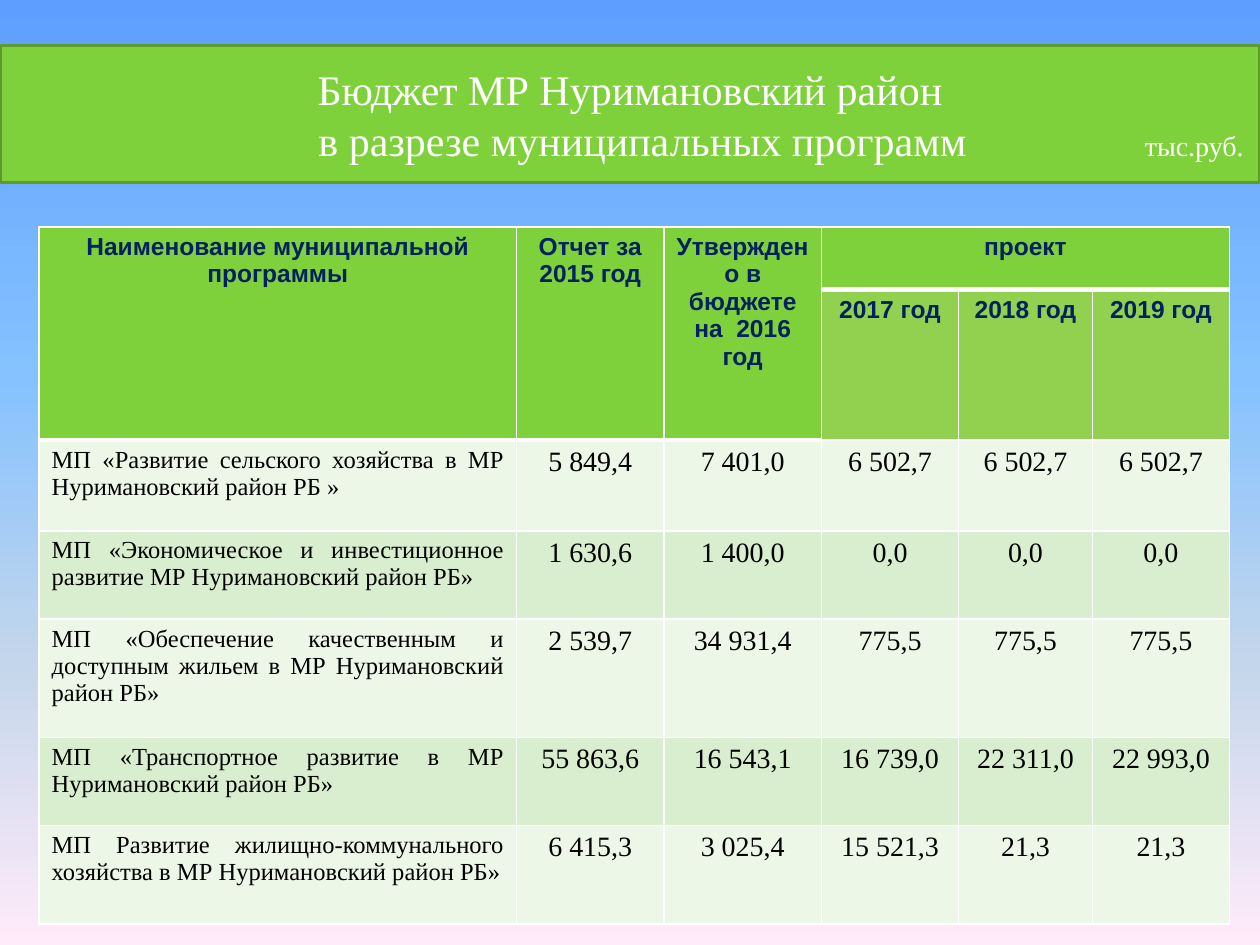
from dataclasses import dataclass

from lxml.etree import SubElement
from pptx import Presentation
from pptx.dml.color import RGBColor
from pptx.enum.text import MSO_ANCHOR, PP_ALIGN
from pptx.oxml.ns import qn
from pptx.util import Inches, Pt


@dataclass
class Theme:
    background = ((0, "5E9EFF"), (40, "85C2FF"), (70, "C4D6EB"), (100, "FFEBFA"))
    green = RGBColor.from_string("7FD13B")
    green_line = RGBColor.from_string("5E9B2C")
    year_fill = RGBColor.from_string("92D050")
    bands = (RGBColor.from_string("ECF7E8"), RGBColor.from_string("D8EECE"))
    header_text = RGBColor.from_string("002060")
    body_text = RGBColor.from_string("000000")
    white = RGBColor.from_string("FFFFFF")
    serif = "Times New Roman"
    sans = "Arial"
    title_size = Pt(24)
    number_size = Pt(16)
    label_size = Pt(14)


theme = Theme()

COLUMN_WIDTHS = (3.79, 1.17, 1.25, 1.09, 1.06, 1.09)
ROW_HEIGHTS = (0.5, 0.5, 0.72, 0.7, 0.94, 0.7, 0.78)
ROWS = (
    ("Наименование муниципальной программы", "Отчет за 2015 год",
     "Утверждено в бюджете на  2016 год", "проект", "", ""),
    ("", "", "", "2017 год", "2018 год", "2019 год"),
    ("МП «Развитие сельского хозяйства в МР Нуримановский район РБ »",
     "5 849,4", "7 401,0", "6 502,7", "6 502,7", "6 502,7"),
    ("МП «Экономическое и инвестиционное развитие МР Нуримановский район РБ»",
     "1 630,6", "1 400,0", "0,0", "0,0", "0,0"),
    ("МП «Обеспечение качественным и доступным жильем в МР Нуримановский район РБ»",
     "2 539,7", "34 931,4", "775,5", "775,5", "775,5"),
    ("МП «Транспортное развитие в МР Нуримановский район РБ»",
     "55 863,6", "16 543,1", "16 739,0", "22 311,0", "22 993,0"),
    ("МП Развитие жилищно-коммунального хозяйства в МР Нуримановский район РБ»",
     "6 415,3", "3 025,4", "15 521,3", "21,3", "21,3"),
)


def add_border(cell, side, width):
    line = SubElement(cell._tc.get_or_add_tcPr(), qn(f"a:ln{side}"), w=str(Pt(width)))
    fill = SubElement(line, qn("a:solidFill"))
    SubElement(fill, qn("a:srgbClr"), val=str(theme.white))


def style_font(font, name, size, color, bold=False):
    font.name = name
    font.size = size
    font.color.rgb = color
    font.bold = bold


presentation = Presentation()
presentation.slide_width = Inches(10)
presentation.slide_height = Inches(7.5)
slide = presentation.slides.add_slide(presentation.slide_layouts[5])

# Background gradient, top to bottom
background = slide.background.fill
background.gradient()
background.gradient_angle = 270
stops = slide._element.find(".//" + qn("a:gsLst"))
for stop in list(stops):
    stops.remove(stop)
for position, color in theme.background:
    stop = SubElement(stops, qn("a:gs"), pos=str(position * 1000))
    SubElement(stop, qn("a:srgbClr"), val=color)

# Title band
title = slide.shapes.title
title.left, title.top = Inches(0), Inches(0.36)
title.width, title.height = Inches(10), Inches(1.09)
title.fill.solid()
title.fill.fore_color.rgb = theme.green
title.line.color.rgb = theme.green_line
title.line.width = Pt(2)
frame = title.text_frame
frame.word_wrap = True
frame.vertical_anchor = MSO_ANCHOR.MIDDLE
heading = frame.paragraphs[0]
heading.text = "Бюджет МР Нуримановский район"
heading.alignment = PP_ALIGN.CENTER
subheading = frame.add_paragraph()
subheading.alignment = PP_ALIGN.LEFT
subheading.add_run().text = "\tв разрезе муниципальных программ\t"
unit = subheading.add_run()
unit.text = "тыс.руб."

# Tab stops centre the second line and push the unit to the right edge
tabs = SubElement(subheading._p.get_or_add_pPr(), qn("a:tabLst"))
for position, alignment in ((5, "ctr"), (9.77, "r")):
    SubElement(tabs, qn("a:tab"), pos=str(Inches(position)), algn=alignment)
for paragraph in frame.paragraphs:
    style_font(paragraph.font, theme.serif, theme.title_size, theme.white)
unit.font.size = theme.number_size

# Budget table
table = slide.shapes.add_table(
    len(ROWS), len(COLUMN_WIDTHS), Inches(0.31), Inches(1.8),
    Inches(sum(COLUMN_WIDTHS)), Inches(sum(ROW_HEIGHTS))).table
for column, width in zip(table.columns, COLUMN_WIDTHS):
    column.width = Inches(width)
for row, height in zip(table.rows, ROW_HEIGHTS):
    row.height = Inches(height)

# Merged headers
for column_index in range(3):
    table.cell(0, column_index).merge(table.cell(1, column_index))
table.cell(0, 3).merge(table.cell(0, 5))

# Cell text, borders and fills
for row_index, values in enumerate(ROWS):
    is_header = row_index < 2
    for column_index, value in enumerate(values):
        cell = table.cell(row_index, column_index)
        under_header = row_index == 0 or (row_index == 1 and column_index < 3)
        add_border(cell, "L", 1)
        add_border(cell, "R", 1)
        if row_index == 0:
            add_border(cell, "T", 1)
        add_border(cell, "B", 3 if under_header else 1)

        cell.fill.solid()
        if under_header:
            cell.fill.fore_color.rgb = theme.green
        elif is_header:
            cell.fill.fore_color.rgb = theme.year_fill
        else:
            cell.fill.fore_color.rgb = theme.bands[row_index % 2]

        if cell.is_spanned:
            continue
        is_label = not is_header and column_index == 0
        cell.text = value
        paragraph = cell.text_frame.paragraphs[0]
        paragraph.alignment = PP_ALIGN.JUSTIFY if is_label else PP_ALIGN.CENTER
        if is_header:
            style_font(paragraph.font, theme.sans, theme.label_size, theme.header_text, True)
        else:
            size = theme.label_size if is_label else theme.number_size
            style_font(paragraph.font, theme.serif, size, theme.body_text)

presentation.save("out.pptx")
